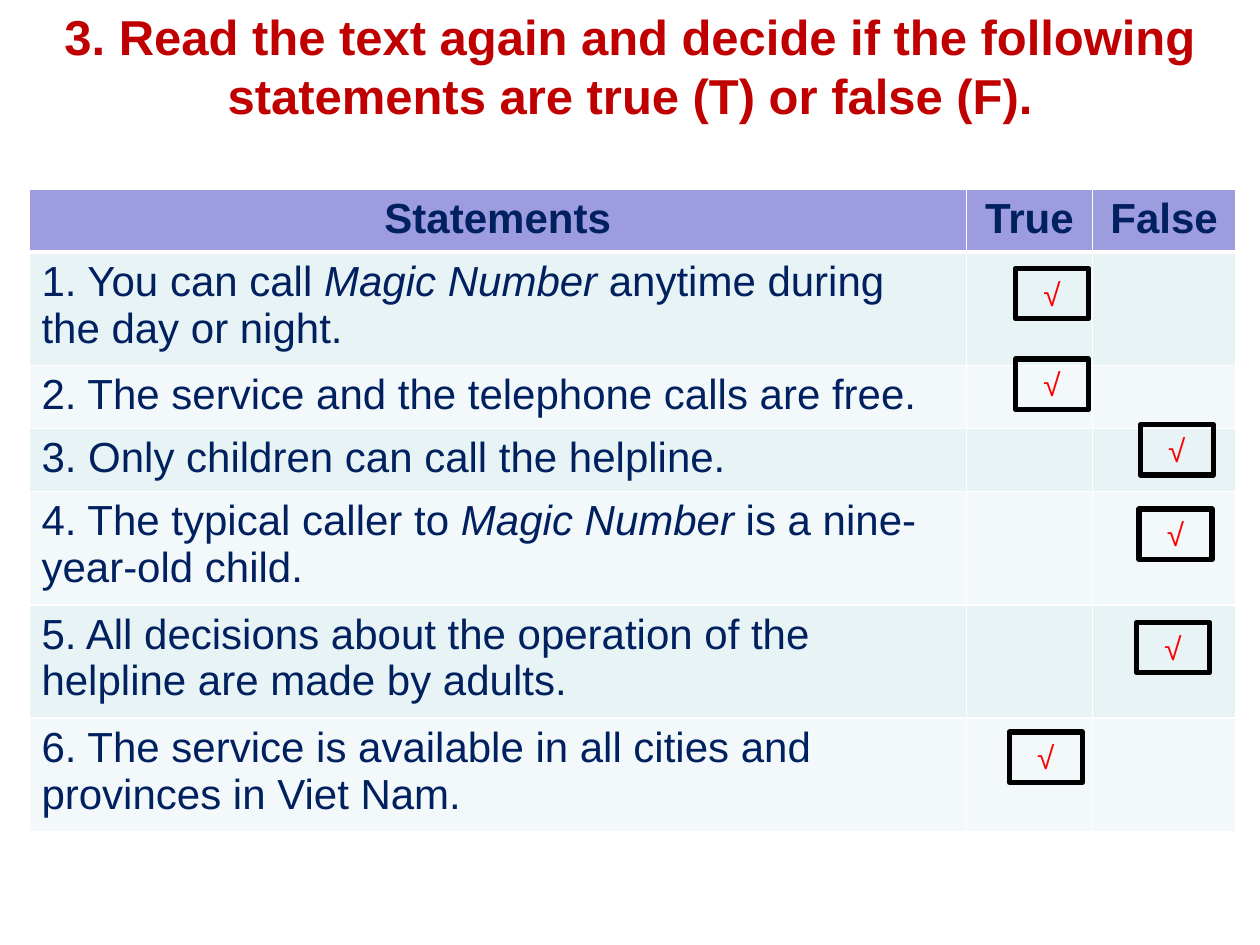
from pptx import Presentation
from pptx.dml.color import RGBColor
from pptx.enum.shapes import MSO_SHAPE
from pptx.enum.text import MSO_ANCHOR, PP_ALIGN
from pptx.oxml.ns import qn
from pptx.util import Inches, Pt
from lxml import etree

RECT = MSO_SHAPE.RECTANGLE
CENTER = PP_ALIGN.CENTER
TOP, MIDDLE = MSO_ANCHOR.TOP, MSO_ANCHOR.MIDDLE

# Content
TITLE = ("3. Read the text again and decide if the following",
         "statements are true (T) or false (F).")
HEADERS = ("Statements", "True", "False")
TRUE, FALSE = 1, 2
# Runs (every second one italic), row height, answer column, tick offset in its cell
STATEMENTS = [
    (("1. You can call ", "Magic Number ", "anytime during the day or night."),
     0.9, TRUE, (0.39, 0.13)),
    (("2. The service and the telephone calls are free.",),
     0.5, TRUE, (0.39, -0.05)),
    (("3. Only children can call the helpline.",),
     0.5, FALSE, (0.38, -0.03)),
    (("4. The typical caller to ", "Magic Number ", "is a nine-year-old child."),
     0.9, FALSE, (0.37, 0.14)),
    (("5. All decisions about the operation of the helpline are made by adults.",),
     0.9, FALSE, (0.35, 0.14)),
    (("6. The service is available in all cities and provinces in Viet Nam.",),
     0.9, TRUE, (0.34, 0.11)),
]

# Layout and colours
LEFT, HEAD_TOP = 0.23, 1.5
COLS = (7.44, 1, 1.14)
ROWS = [0.5] + [height for _, height, _, _ in STATEMENTS]
TICK_W, TICK_H = 0.58, 0.4
HEAD_FILL, BANDS = "9C9CDF", ("E7F3F4", "F3F9FA")
NAVY, WHITE = "002060", "FFFFFF"


def rgb(value):
    return RGBColor.from_string(value)


def style(p, size, color, bold=False, align=None):
    f = p.font
    f.name, f.size, f.bold = "Arial", Pt(size), bold
    f.color.rgb = rgb(color)
    p.alignment = align


def format_cell(cell, fill, top, bottom):
    """White borders (widths in points), then the fill."""
    tcPr = cell._tc.get_or_add_tcPr()
    for tag, width in (("lnL", 1), ("lnR", 1), ("lnT", top), ("lnB", bottom)):
        ln = etree.SubElement(tcPr, qn("a:" + tag), w=str(Pt(width)))
        solid = etree.SubElement(ln, qn("a:solidFill"))
        etree.SubElement(solid, qn("a:srgbClr"), val=WHITE)
    cell.fill.solid()
    cell.fill.fore_color.rgb = rgb(fill)


prs = Presentation()
prs.slide_width, prs.slide_height = Inches(10), Inches(7.5)
s = prs.slides.add_slide(prs.slide_layouts[5])

# Title
title = s.shapes.title
title.left, title.top = Inches(0.25), Inches(0)
title.width, title.height = Inches(9.5), Inches(1.04)
tf = title.text_frame
tf.vertical_anchor = TOP
p = tf.paragraphs[0]
p.text = "\v".join(TITLE)
style(p, 28, "C00000", True, CENTER)

# Table
table = s.shapes.add_table(len(ROWS), len(COLS), Inches(LEFT), Inches(HEAD_TOP),
                           Inches(sum(COLS)), Inches(sum(ROWS))).table
for column, width in zip(table.columns, COLS):
    column.width = Inches(width)
for row, height in zip(table.rows, ROWS):
    row.height = Inches(height)

for c, header in enumerate(HEADERS):
    cell = table.cell(0, c)
    format_cell(cell, HEAD_FILL, 1, 3)
    p = cell.text_frame.paragraphs[0]
    p.text = header
    style(p, 24, NAVY, True, CENTER)

for i, (runs, *_) in enumerate(STATEMENTS):
    for c in range(len(COLS)):
        format_cell(table.cell(i + 1, c), BANDS[i % 2], 1 if i else 3, 1)
    p = table.cell(i + 1, 0).text_frame.paragraphs[0]
    style(p, 24, NAVY)
    for n, text in enumerate(runs):
        r = p.add_run()
        r.text = text
        r.font.italic = n % 2 == 1

# Ticked answer boxes
for i, (_, _, column, (dx, dy)) in enumerate(STATEMENTS):
    x = LEFT + sum(COLS[:column]) + dx
    y = HEAD_TOP + sum(ROWS[:i + 1]) + dy
    sp = s.shapes.add_shape(RECT, Inches(x), Inches(y), Inches(TICK_W), Inches(TICK_H))
    sp.shadow.inherit = False
    sp.fill.background()
    sp.line.color.rgb = rgb("000000")
    sp.line.width = Pt(3)
    tf = sp.text_frame
    tf.vertical_anchor = MIDDLE
    p = tf.paragraphs[0]
    p.text = "√"
    style(p, 18, "FF0000", align=CENTER)

prs.save("out.pptx")
